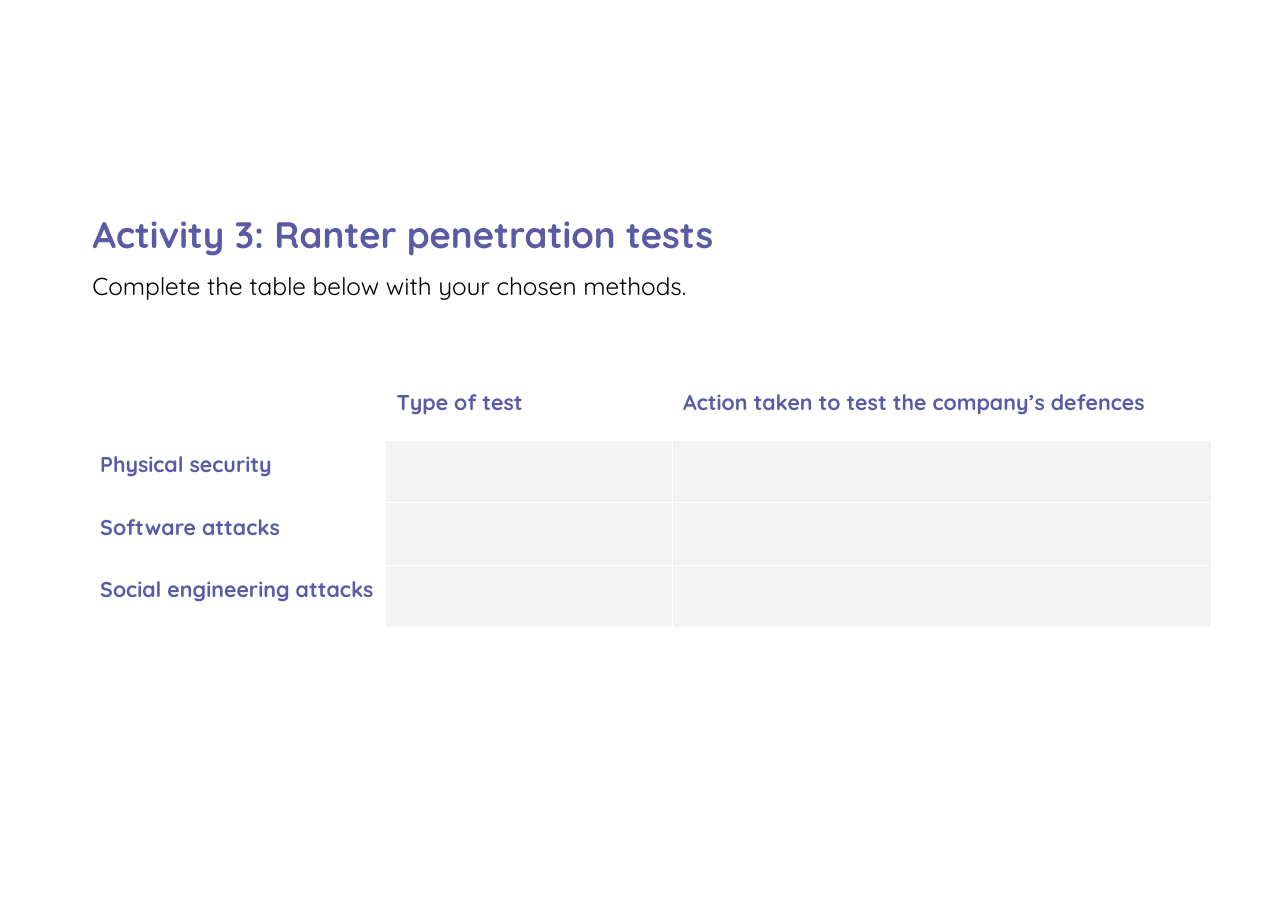
"""Build the penetration tests worksheet slide."""
import pptx
import pptx.dml.color
import pptx.enum.text
import pptx.oxml
import pptx.oxml.ns
import pptx.util

Pt = pptx.util.Pt
PURPLE = pptx.dml.color.RGBColor(0x5B, 0x5B, 0xA5)
BLACK = pptx.dml.color.RGBColor(0, 0, 0)
GREY = pptx.dml.color.RGBColor(0xF3, 0xF3, 0xF3)
WHITE = pptx.dml.color.RGBColor(0xFF, 0xFF, 0xFF)

INSET = Pt(7.2)
LEFT, WIDTH = Pt(53.28), Pt(652.32)
HEAD = {"name": "Quicksand", "size": Pt(24), "bold": True}
BODY = {"name": "Quicksand", "size": Pt(16), "bold": False}
LABEL = {"name": "Quicksand", "size": Pt(14), "bold": True}
FRAME = {
    "word_wrap": True,
    "auto_size": pptx.enum.text.MSO_AUTO_SIZE.NONE,
    "vertical_anchor": pptx.enum.text.MSO_ANCHOR.TOP,
    "margin_left": INSET,
    "margin_right": INSET,
    "margin_bottom": 0,
}
CELL = {f"margin_{side}": INSET for side in ("left", "right", "top", "bottom")}
COLS = [Pt(193.68), Pt(187.2), Pt(352.8)]
ROW = Pt(40.8)
ROWS = [
    ["", "Type of test", "Action taken to test the company’s defences"],
    ["Physical security", "", ""],
    ["Software attacks", "", ""],
    ["Social engineering attacks", "", ""],
]


def apply(target, values):
    """Set each named value on the target."""
    for name, value in values.items():
        setattr(target, name, value)


def style(para, font, color):
    """Format the font of a paragraph's runs."""
    for run in para.runs:
        apply(run.font, font)
        run.font.color.rgb = color


def write(shape, text, top, height, inset, before, font, color):
    """Place a shape and fill it with one line of text."""
    apply(shape, {"left": LEFT, "top": top, "width": WIDTH, "height": height})
    frame = shape.text_frame
    frame.text = text
    apply(frame, {**FRAME, "margin_top": inset})
    para = frame.paragraphs[0]
    apply(para, {"alignment": pptx.enum.text.PP_ALIGN.LEFT,
                 "line_spacing": 1.15, "space_before": before})
    style(para, font, color)


def border(cell):
    """Draw thin white lines round a cell."""
    props = cell._tc.get_or_add_tcPr()
    space = pptx.oxml.ns.nsdecls("a")
    for index, side in enumerate("LRTB"):
        line = pptx.oxml.parse_xml(
            f'<a:ln{side} {space} w="{Pt(0.75)}"><a:solidFill>'
            f'<a:srgbClr val="{WHITE}"/></a:solidFill></a:ln{side}>')
        props.insert(index, line)


def add_grid(slide):
    """Add the table with its labels and answer cells."""
    grid = slide.shapes.add_table(len(ROWS), len(COLS), Pt(58.32), Pt(246.96),
                                  sum(COLS), ROW * len(ROWS)).table
    apply(grid, {"first_row": False, "horz_banding": False})
    for col, width in zip(grid.columns, COLS):
        col.width = width
    for r, texts in enumerate(ROWS):
        grid.rows[r].height = ROW
        for c, text in enumerate(texts):
            cell = grid.cell(r, c)
            cell.text = text
            apply(cell, CELL)
            style(cell.text_frame.paragraphs[0], LABEL, PURPLE)
            if r and c:
                cell.fill.solid()
                cell.fill.fore_color.rgb = GREY
            else:
                cell.fill.background()
            border(cell)


def main():
    """Build and save the slide."""
    deck = pptx.Presentation()
    apply(deck, {"slide_width": Pt(841.68), "slide_height": Pt(595.44)})
    slide = deck.slides.add_slide(deck.slide_layouts[5])
    write(slide.shapes.title, "Activity 3: Ranter penetration tests",
          Pt(126.72), Pt(47.7), INSET, Pt(20), HEAD, PURPLE)
    write(slide.shapes.add_textbox(0, 0, 0, 0),
          "Complete the table below with your chosen methods.",
          Pt(174.42), Pt(26), 0, Pt(6), BODY, BLACK)
    add_grid(slide)
    deck.save("out.pptx")


if __name__ == "__main__":
    main()
